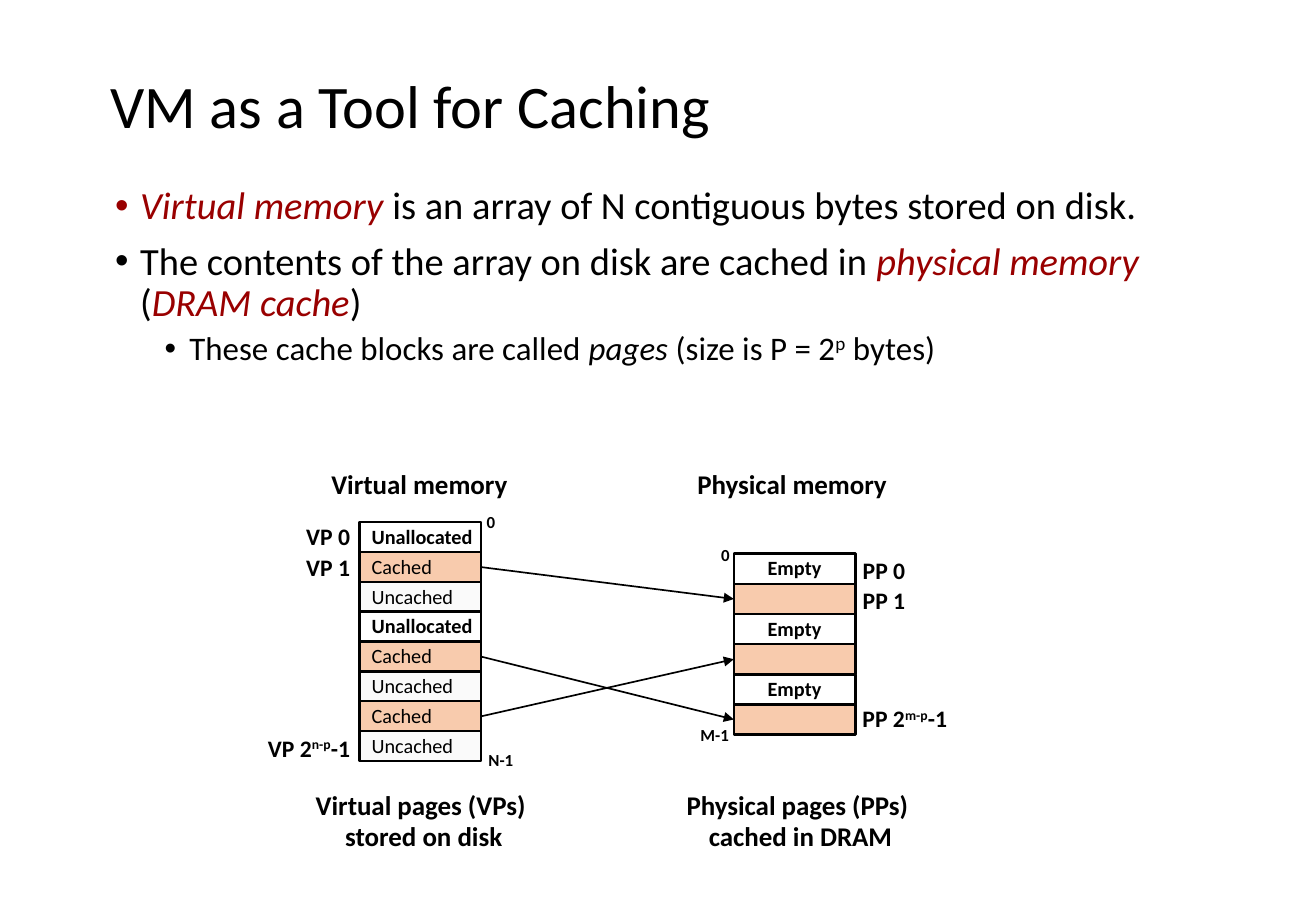
"""Build the slide on virtual memory as a tool for caching."""
import pptx
import pptx.dml.color
import pptx.enum.shapes
import pptx.enum.text
import pptx.oxml
import pptx.oxml.ns
import pptx.util

Cm = pptx.util.Cm
Pt = pptx.util.Pt
RGBColor = pptx.dml.color.RGBColor
ALIGN = pptx.enum.text.PP_ALIGN
ANCHOR = pptx.enum.text.MSO_ANCHOR
FIT = pptx.enum.text.MSO_AUTO_SIZE
SHAPE = pptx.enum.shapes.MSO_SHAPE
LINK = pptx.enum.shapes.MSO_CONNECTOR

BLACK = RGBColor(0, 0, 0)
WHITE = RGBColor(255, 255, 255)
RED = RGBColor(0x99, 0, 0)
PEACH = RGBColor(0xF8, 0xCB, 0xAD)
PALE = RGBColor(0xFA, 0xFA, 0xFA)


def write(shape, lines, size, bold=False, align=ALIGN.LEFT, anchor=ANCHOR.MIDDLE,
          space=0.98, before=0, wrap=False, fit=False):
    """Fill a shape with lines of (text, style) runs and return its paragraphs."""
    frame = shape.text_frame
    frame.word_wrap = wrap
    frame.vertical_anchor = anchor
    frame.auto_size = FIT.SHAPE_TO_FIT_TEXT if fit else FIT.NONE
    for index, line in enumerate(lines):
        para = frame.add_paragraph() if index else frame.paragraphs[0]
        para.alignment = align
        para.line_spacing = space
        para.space_before = Pt(before)
        for text, style in line:
            run = para.add_run()
            run.text = text
            font = run.font
            font.name = "Calibri"
            font.size = Pt(size)
            font.bold = bold
            font.italic = style in ("key", "italic")
            font.color.rgb = RED if style == "key" else BLACK
            if style == "super":
                font._element.set("baseline", "30000")
    return frame.paragraphs


deck = pptx.Presentation()
deck.slide_width = Cm(27.51)
deck.slide_height = Cm(19.05)
slide = deck.slides.add_slide(deck.slide_layouts[6])
shapes = slide.shapes

title = shapes.add_textbox(Cm(2.06), Cm(1.22), Cm(21.08), Cm(2.11))
write(title, [[("VM as a Tool for Caching", "")]], 35.8, space=0.9, wrap=True)

points = [
    [("Virtual memory ", "key"),
     ("is an array of N contiguous bytes stored on disk.", "")],
    [("The contents of the array on disk are cached in ", ""),
     ("physical memory", "key"), (" (", ""), ("DRAM cache", "key"), (")", "")],
    [("These cache blocks are called ", ""), ("pages ", "italic"),
     ("(size is P = 2", ""), ("p", "super"), (" bytes)", "")],
]
body = shapes.add_textbox(Cm(2.16), Cm(3.78), Cm(21.95), Cm(5.74))
paras = write(body, points, 22.8, anchor=ANCHOR.TOP, space=0.9, before=8.1, wrap=True)
for para, margin in zip(paras, (0.52, 0.52, 1.55)):
    props = para._p.get_or_add_pPr()
    props.set("marL", str(Cm(margin)))
    props.set("indent", str(-Cm(0.52)))
    bullet = pptx.oxml.ns.nsdecls("a")
    props.append(pptx.oxml.parse_xml(f'<a:buFont {bullet} typeface="Arial"/>'))
    props.append(pptx.oxml.parse_xml(f'<a:buChar {bullet} char="•"/>'))
paras[2].level = 1
paras[2].space_before = Pt(4.1)
for run in paras[2].runs:
    run.font.size = Pt(19.5)

FILLS = {"Unallocated": WHITE, "Empty": WHITE, "Cached": PEACH, "": PEACH,
         "Uncached": PALE}
stacks = [
    (7.52, 10.92, 0.624, ALIGN.LEFT,
     ["Unallocated", "Cached", "Uncached", "Unallocated",
      "Cached", "Uncached", "Cached", "Uncached"]),
    (15.34, 11.58, 0.63, ALIGN.CENTER, ["Empty", ""] * 3),
]
pages = []
for left, top, pitch, align, states in stacks:
    stack = []
    for row, state in enumerate(states):
        page = shapes.add_shape(SHAPE.RECTANGLE, Cm(left), Cm(top + row * pitch),
                                Cm(2.54), Cm(0.63))
        page.shadow.inherit = False
        page.fill.solid()
        page.fill.fore_color.rgb = FILLS[state]
        page.line.color.rgb = BLACK
        page.line.width = Pt(1.5)
        if state:
            write(page, [[(state, "")]], 12, align=align,
                  bold=state in ("Unallocated", "Empty"))
        stack.append(page)
    pages.append(stack)

for start, end in ((1, 1), (4, 5), (6, 3)):
    arrow = shapes.add_connector(LINK.STRAIGHT, 0, 0, 0, 0)
    arrow.begin_connect(pages[0][start], 3)
    arrow.end_connect(pages[1][end], 1)
    arrow.line.color.rgb = BLACK
    arrow.line.width = Pt(1)
    line = arrow.line._get_or_add_ln()
    names = pptx.oxml.ns.nsdecls("a")
    line.append(pptx.oxml.parse_xml(f'<a:tailEnd {names} type="triangle"/>'))
    arrow._element.spPr.append(pptx.oxml.parse_xml(f"<a:effectLst {names}/>"))

TIGHT = {"anchor": ANCHOR.TOP, "space": 0.88, "before": 6}
HEAD = {"size": 16, "align": ALIGN.CENTER, **TIGHT}
VIRT = {"size": 14, "align": ALIGN.RIGHT, **TIGHT}
PHYS = {"size": 14, "align": ALIGN.CENTER}
LAST = {"size": 14, **TIGHT}
EDGE = {"size": 10, "align": ALIGN.CENTER}
FOOT = {"size": 16, "align": ALIGN.CENTER}
labels = [
    (6.65, 9.73, 4.24, 0.86, [[("Virtual memory", "")]], HEAD),
    (14.3, 9.73, 4.52, 0.86, [[("Physical memory", "")]], HEAD),
    (6.15, 10.87, 1.42, 0.79, [[("VP 0", "")]], VIRT),
    (6.15, 11.51, 1.42, 0.79, [[("VP 1", "")]], VIRT),
    (5.28, 15.29, 2.29, 0.79, [[("VP 2", ""), ("n-p", "super"), ("-1", "")]], VIRT),
    (17.78, 11.51, 1.4, 0.86, [[("PP 0", "")]], PHYS),
    (17.78, 12.14, 1.4, 0.86, [[("PP 1", "")]], PHYS),
    (17.78, 14.68, 2.36, 0.79, [[("PP 2", ""), ("m-p", "super"), ("-1", "")]], LAST),
    (9.91, 10.59, 0.71, 0.69, [[("0", "")]], EDGE),
    (9.96, 15.57, 1.02, 0.69, [[("N-1", "")]], EDGE),
    (14.81, 11.28, 0.71, 0.69, [[("0", "")]], EDGE),
    (14.38, 15.04, 1.12, 0.69, [[("M-1", "")]], EDGE),
    (6.32, 16.38, 5.08, 1.6,
     [[("Virtual pages (VPs) ", "")], [("stored on disk", "")]], FOOT),
    (14.07, 16.38, 5.33, 1.6,
     [[("Physical pages (PPs) ", "")], [("cached in DRAM", "")]], FOOT),
]
for left, top, width, height, lines, form in labels:
    label = shapes.add_textbox(Cm(left), Cm(top), Cm(width), Cm(height))
    write(label, lines, bold=True, fit=True, **form)

deck.save("out.pptx")
